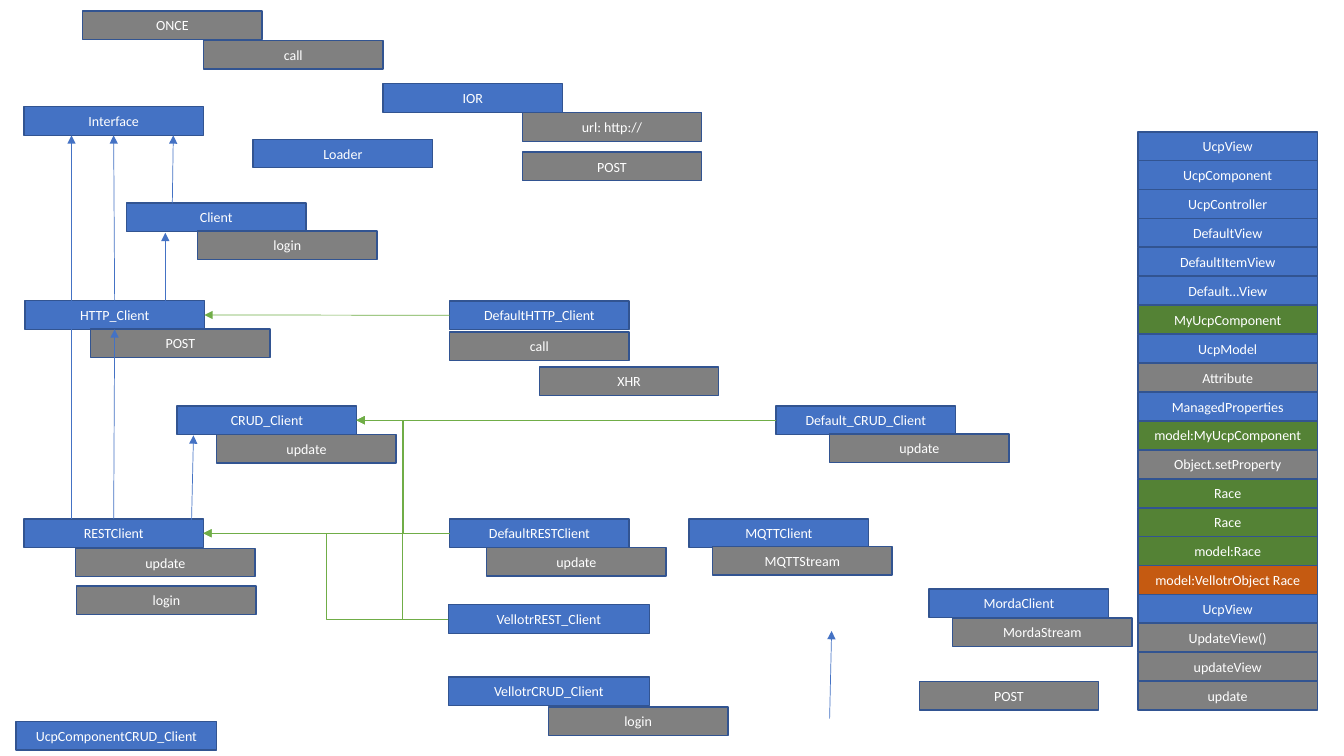
from dataclasses import dataclass

from lxml.etree import SubElement
from pptx import Presentation
from pptx.dml.color import RGBColor
from pptx.enum.shapes import MSO_CONNECTOR, MSO_SHAPE
from pptx.enum.text import MSO_ANCHOR, PP_ALIGN
from pptx.oxml.ns import qn
from pptx.util import Pt


@dataclass(frozen=True)
class Theme:
    type_fill: str = "4472C4"
    member_fill: str = "808080"
    custom_fill: str = "548235"
    backend_fill: str = "C55A11"
    border: str = "325491"
    inherits: str = "4472C4"
    implements: str = "70AD47"
    label: str = "FFFFFF"
    font: str = "Calibri"
    label_size: float = 10
    border_width: float = 1
    arrow_width: float = 0.5
    box_width: float = 128.2
    box_height: float = 20.4


TOP, LEFT, BOTTOM, RIGHT = range(4)
THEME = Theme()

# label: left, top and, where it differs, width
TYPES = {
    "IOR": (273.6, 59.8),
    "DefaultHTTP_Client": (321.2, 215),
    "Loader": (180.8, 99.5),
    "DefaultRESTClient": (321.2, 370.7),
    "HTTP_Client": (17.8, 214.8),
    "RESTClient": (17.1, 370.7),
    "Interface": (17.1, 76.3),
    "UcpComponentCRUD_Client": (11.4, 515.4, 143.5),
    "MQTTClient": (492.2, 370.7),
    "MordaClient": (663.7, 420.6),
    "CRUD_Client": (126.5, 290),
    "Default_CRUD_Client": (554.3, 290),
    "VellotrCRUD_Client": (320.3, 483.6, 143.5),
    "VellotrREST_Client": (320.3, 432, 143.5),
    "Client": (90.3, 145),
}
MEMBERS = [
    ("ONCE", 59, 7.9),
    ("call", 145.4, 28.8),
    ("url: http://", 373, 80.6),
    ("POST", 373, 108.7),
    ("login", 141.1, 165),
    ("POST", 64.7, 234.9),
    ("call", 321.2, 237.2),
    ("XHR", 385.2, 262.1),
    ("update", 154.8, 310.3),
    ("update", 592.6, 310.1),
    ("update", 54, 391.6),
    ("login", 54.8, 418.5),
    ("update", 347.6, 391),
    ("MQTTStream", 509, 390.4),
    ("MordaStream", 680.4, 441.5),
    ("POST", 656.6, 486.9),
    ("login", 391.7, 504.9),
]
UCP_STACK = [
    ("UcpView", THEME.type_fill),
    ("UcpComponent", THEME.type_fill),
    ("UcpController", THEME.type_fill),
    ("DefaultView", THEME.type_fill),
    ("DefaultItemView", THEME.type_fill),
    ("Default…View", THEME.type_fill),
    ("MyUcpComponent", THEME.custom_fill),
    ("UcpModel", THEME.type_fill),
    ("Attribute", THEME.member_fill),
    ("ManagedProperties", THEME.type_fill),
    ("model:MyUcpComponent", THEME.custom_fill),
    ("Object.setProperty", THEME.member_fill),
    ("Race", THEME.custom_fill),
    ("Race", THEME.custom_fill),
    ("model:Race", THEME.custom_fill),
    ("model:VellotrObject Race", THEME.backend_fill),
    ("UcpView", THEME.type_fill),
    ("UpdateView()", THEME.member_fill),
    ("updateView", THEME.member_fill),
    ("update", THEME.member_fill),
]
STACK_LEFT, STACK_TOP, STACK_PITCH = 812.8, 94.2, 20.66

# Inheritance arrows that meet a box away from the middle of its side
OFFSET_ARROWS = [
    ((51.1, 370.7), (51.1, 96.7)),
    ((136.8, 373), (138.2, 311)),
    ((592.6, 513.4), (594, 450.7)),
    ((123.1, 145.2), (123.8, 96.7)),
    ((118.1, 214.8), (118.1, 166.3)),
]
INHERITANCE = [("HTTP_Client", "Interface"), ("RESTClient", "HTTP_Client")]
IMPLEMENTATION = [
    ("DefaultHTTP_Client", "HTTP_Client", MSO_CONNECTOR.STRAIGHT),
    ("Default_CRUD_Client", "CRUD_Client", MSO_CONNECTOR.STRAIGHT),
    ("DefaultRESTClient", "RESTClient", MSO_CONNECTOR.STRAIGHT),
    ("VellotrREST_Client", "RESTClient", MSO_CONNECTOR.ELBOW),
    ("VellotrREST_Client", "CRUD_Client", MSO_CONNECTOR.ELBOW),
    ("DefaultRESTClient", "CRUD_Client", MSO_CONNECTOR.ELBOW),
]


class Diagram:
    def __init__(self, slide, theme):
        self.slide = slide
        self.theme = theme

    def box(self, label, fill, left, top, width=None):
        theme = self.theme
        shape = self.slide.shapes.add_shape(
            MSO_SHAPE.RECTANGLE, Pt(left), Pt(top),
            Pt(width or theme.box_width), Pt(theme.box_height))
        shape.shadow.inherit = False
        shape.fill.solid()
        shape.fill.fore_color.rgb = RGBColor.from_string(fill)
        shape.line.color.rgb = RGBColor.from_string(theme.border)
        shape.line.width = Pt(theme.border_width)
        frame = shape.text_frame
        frame.vertical_anchor = MSO_ANCHOR.MIDDLE
        paragraph = frame.paragraphs[0]
        paragraph.alignment = PP_ALIGN.CENTER
        run = paragraph.add_run()
        run.text = label
        run.font.name = theme.font
        run.font.size = Pt(theme.label_size)
        run.font.color.rgb = RGBColor.from_string(theme.label)
        return shape

    def arrow(self, color, start=(0, 0), end=(0, 0), route=MSO_CONNECTOR.STRAIGHT):
        connector = self.slide.shapes.add_connector(
            route, *(Pt(length) for length in (*start, *end)))
        connector.line.color.rgb = RGBColor.from_string(color)
        connector.line.width = Pt(self.theme.arrow_width)
        properties = connector.line._get_or_add_ln()
        SubElement(properties, qn("a:tailEnd"), type="triangle")
        SubElement(connector._element.spPr, qn("a:effectLst"))
        return connector

    def link(self, color, source, source_side, target, target_side,
             route=MSO_CONNECTOR.STRAIGHT):
        """Draw an arrow joined to the sides of two boxes."""
        connector = self.arrow(color, route=route)
        connector.begin_connect(source, source_side)
        connector.end_connect(target, target_side)


def main():
    presentation = Presentation()
    presentation.slide_width = Pt(960)
    presentation.slide_height = Pt(540)
    slide = presentation.slides.add_slide(presentation.slide_layouts[6])
    diagram = Diagram(slide, THEME)

    for row, (label, fill) in enumerate(UCP_STACK):
        diagram.box(label, fill, STACK_LEFT, STACK_TOP + row * STACK_PITCH)
    types = {label: diagram.box(label, THEME.type_fill, *place)
             for label, place in TYPES.items()}
    for label, left, top in MEMBERS:
        diagram.box(label, THEME.member_fill, left, top)

    for start, end in OFFSET_ARROWS:
        diagram.arrow(THEME.inherits, start, end)
    for child, parent in INHERITANCE:
        diagram.link(THEME.inherits, types[child], TOP, types[parent], BOTTOM)
    for child, parent, route in IMPLEMENTATION:
        diagram.link(THEME.implements, types[child], LEFT, types[parent], RIGHT, route)

    presentation.save("out.pptx")


if __name__ == "__main__":
    main()
